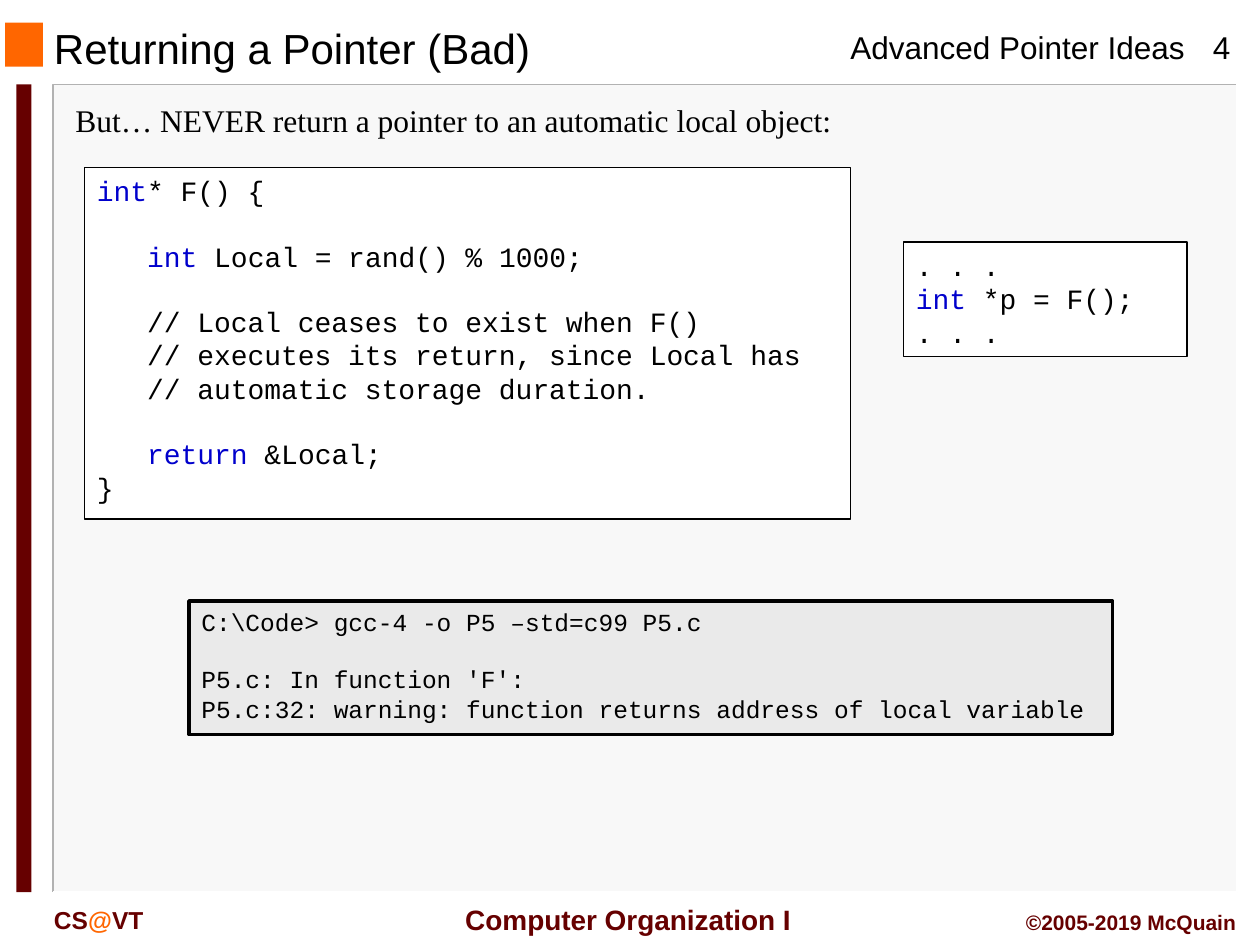
"""Build the slide warning against returning a pointer to a local object."""
from pptx import Presentation
from pptx import util as u
from pptx.dml.color import RGBColor
from pptx.enum import shapes, text

COLOURS = {
    "black": "000000", "white": "FFFFFF", "panel": "F8F8F8", "edge": "B2B2B2",
    "orange": "FF6600", "maroon": "660000", "keyword": "0000CC", "console": "EAEAEA",
}
CODE_INDENT = u.Inches(0.4)
LINE_FACTOR = 1.13


def colour(name):
    """Return the named colour."""
    return RGBColor.from_string(COLOURS[name])


def add_spans(para, spans, font, size, bold=False):
    """Append (text, colour name) spans to a paragraph."""
    for words, name in spans:
        span = para.add_run()
        span.text = words
        span.font.name = font
        span.font.size = u.Pt(size)
        span.font.bold = bold
        span.font.color.rgb = colour(name)


def add_rect(slide, place, fill, line_width=0):
    """Add a filled rectangle, with a black outline if a width is given."""
    box = slide.shapes.add_shape(
        shapes.MSO_SHAPE.RECTANGLE, *(u.Inches(value) for value in place))
    box.shadow.inherit = False
    box.fill.solid()
    box.fill.fore_color.rgb = colour(fill)
    if line_width:
        box.line.color.rgb = colour("black")
        box.line.width = u.Pt(line_width)
    else:
        box.line.fill.background()
    return box


def add_edge(slide, points, name):
    """Add an open outline through the points."""
    start, *rest = [(u.Inches(x), u.Inches(y)) for x, y in points]
    builder = slide.shapes.build_freeform(*start)
    builder.add_line_segments(rest, close=False)
    edge = builder.convert_to_shape()
    edge.shadow.inherit = False
    edge.fill.background()
    edge.line.color.rgb = colour(name)
    edge.line.width = u.Pt(1)


def add_label(slide, place, spans, size, font="Arial", bold=False,
              align="LEFT", anchor="TOP", wrap=True):
    """Add a text box with one line of text."""
    box = slide.shapes.add_textbox(*(u.Inches(value) for value in place))
    frame = box.text_frame
    frame.word_wrap = wrap
    frame.vertical_anchor = getattr(text.MSO_ANCHOR, anchor)
    para = frame.paragraphs[0]
    para.alignment = getattr(text.PP_ALIGN, align)
    add_spans(para, spans, font, size, bold)


def add_listing(slide, place, lines, size, fill="white", line_width=0.75):
    """Add a boxed listing of (indent level, gap in lines, spans) rows."""
    frame = add_rect(slide, place, fill, line_width).text_frame
    frame.word_wrap = True
    frame.vertical_anchor = text.MSO_ANCHOR.TOP
    for number, (level, gap, spans) in enumerate(lines):
        para = frame.add_paragraph() if number else frame.paragraphs[0]
        para.alignment = text.PP_ALIGN.LEFT
        para.space_before = u.Pt(round(gap * size * LINE_FACTOR, 1))
        if level:
            properties = para._p.get_or_add_pPr()
            properties.set("marL", str(level * CODE_INDENT))
            properties.set("indent", "0")
        add_spans(para, spans, "Courier New", size)


def add_frame(slide):
    """Add the panel, the side bar and the corner square."""
    left, top, right, bottom = 0.42, 0.67, 9.82, 7.08
    add_rect(slide, (left, top, right - left, bottom - top), "panel")
    add_edge(slide, [(right, top), (left, top), (left, bottom)], "edge")
    add_edge(slide, [(right, top), (right, bottom), (left, bottom)], "white")
    add_rect(slide, (0.04, 0.18, 0.3, 0.35), "orange")
    add_rect(slide, (0.13, 0.67, 0.12, 6.41), "maroon")


def add_header_and_footer(slide):
    """Add the running text at the top and the bottom."""
    add_label(slide, (6.65, 0.17, 2.88, 0.4), [("Advanced Pointer Ideas", "black")], 18, wrap=False)
    add_label(slide, (9.36, 0.17, 0.67, 0.4), [("4", "black")], 18, align="CENTER")
    add_label(slide, (0.33, 7.13, 1.5, 0.33),
              [("CS", "maroon"), ("@", "orange"), ("VT", "maroon")], 14, bold=True)
    add_label(slide, (3.5, 7.11, 2.91, 0.37), [(" Computer Organization I", "maroon")], 16,
              bold=True, align="CENTER", anchor="MIDDLE", wrap=False)
    add_label(slide, (7.83, 7.17, 2.08, 0.3), [("©2005-2019 McQuain", "maroon")], 12,
              bold=True, align="RIGHT")


def add_code(slide):
    """Add the function, its call and the compiler output."""
    function = [
        (0, 0, [("int", "keyword"), ("* F() {", "black")]),
        (1, 1, [("int", "keyword"), (" Local = rand() % 1000;", "black")]),
        (1, 1, [("// Local ceases to exist when F()", "black")]),
        (1, 0, [("// executes its return, since Local has", "black")]),
        (1, 0, [("// automatic storage duration.", "black")]),
        (1, 1, [("return", "keyword"), (" &Local;", "black")]),
        (0, 0, [("}", "black")]),
    ]
    call = [
        (0, 0, [(". . .", "black")]),
        (0, 0, [("int", "keyword"), (" *p = F();", "black")]),
        (0, 0, [(". . .", "black")]),
    ]
    console = [
        (0, 0, [("C:\\Code> gcc-4 -o P5 –std=c99 P5.c", "black")]),
        (0, 1, [("P5.c: In function 'F':", "black")]),
        (0, 0, [("P5.c:32: warning: function returns address of local variable", "black")]),
    ]
    add_listing(slide, (0.67, 1.33, 6.08, 2.79), function, 16)
    add_listing(slide, (7.17, 1.92, 2.25, 0.91), call, 16)
    add_listing(slide, (1.5, 4.77, 7.33, 1.06), console, 14, "console", 2)


def main():
    """Build and save the deck."""
    deck = Presentation()
    deck.slide_width, deck.slide_height = u.Inches(10), u.Inches(7.5)
    slide = deck.slides.add_slide(deck.slide_layouts[6])
    add_frame(slide)
    add_header_and_footer(slide)
    add_label(slide, (0.33, 0.19, 6.33, 0.38), [("Returning a Pointer (Bad)", "black")], 24,
              anchor="MIDDLE")
    add_label(slide, (0.5, 0.75, 9.25, 0.4),
              [("But… NEVER return a pointer to an automatic local object:", "black")],
              18, font="Times New Roman")
    add_code(slide)
    deck.save("out.pptx")


if __name__ == "__main__":
    main()
